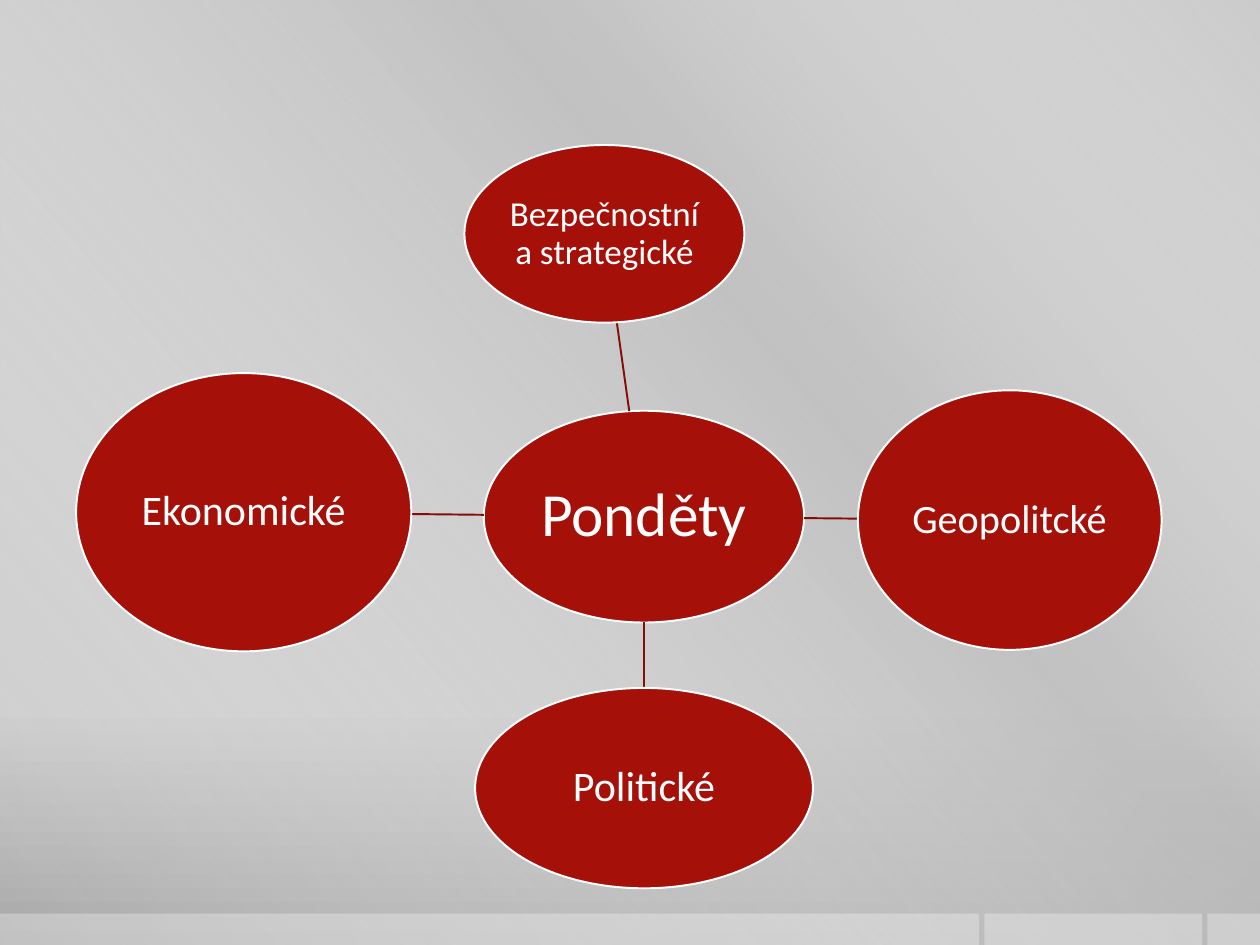
import math
from dataclasses import dataclass

import lxml.etree
import pptx
import pptx.dml.color
import pptx.enum.shapes
import pptx.enum.text
import pptx.oxml
import pptx.oxml.ns
import pptx.util

Pt = pptx.util.Pt
RGB = pptx.dml.color.RGBColor
qn = pptx.oxml.ns.qn
SHAPES = pptx.enum.shapes.MSO_SHAPE


@dataclass(frozen=True)
class Theme:
    font: str = "Calibri"
    bubble: RGB = RGB(0xA5, 0x10, 0x09)
    link: RGB = RGB(0x84, 0x0D, 0x07)
    white: RGB = RGB(0xFF, 0xFF, 0xFF)
    line_width: float = 1.1
    hub_size: int = 35
    large_size: int = 24
    medium_size: int = 23
    small_size: int = 20
    tile_opacity: int = 30


@dataclass(frozen=True)
class GradientStop:
    position: int
    color: str
    opacity: int = 100


@dataclass(frozen=True)
class Bubble:
    text: str
    cx: float
    cy: float
    width: float
    height: float
    size: int

    def edge_toward(self, other: "Bubble") -> tuple[float, float]:
        """Point where the line to the other centre leaves this ellipse."""
        dx, dy = other.cx - self.cx, other.cy - self.cy
        scale = 1 / math.hypot(dx / (self.width / 2), dy / (self.height / 2))
        return self.cx + dx * scale, self.cy + dy * scale


THEME = Theme()
SLIDE_W, SLIDE_H = 720, 540
TILE_TOP = 522
TILES = [(0, 559.5), (562.5, 124.5), (690, 30)]  # left, width

BACKDROP = [GradientStop(0, "CBCBCB"), GradientStop(76, "C8C8C8"),
            GradientStop(100, "A7A7A7")]
SHEEN = [GradientStop(0, "FFFFFF", 0), GradientStop(34, "BFBFBF", 61),
         GradientStop(38, "BFBFBF", 76), GradientStop(100, "FFFFFF", 0)]

HUB = Bubble("Ponděty", 368, 295.2, 183, 121, THEME.hub_size)
SPOKES = [
    Bubble("Bezpečnostní a strategické", 345.4, 133.6, 160, 101.5, THEME.small_size),
    Bubble("Geopolitcké", 577, 297.2, 173.5, 148.3, THEME.medium_size),
    Bubble("Politické", 368, 450.4, 193, 114.5, THEME.large_size),
    Bubble("Ekonomické", 139.3, 292.7, 191.5, 159, THEME.large_size),
]


def set_gradient(fill, stops: list[GradientStop], angle: int) -> None:
    """Apply a linear gradient with any number of stops, angle clockwise."""
    fill.gradient()
    # The public angle is counter-clockwise.
    fill.gradient_angle = 360 - angle
    stop_list = fill._fill._gradFill.find(qn("a:gsLst"))
    for old in list(stop_list):
        stop_list.remove(old)
    for stop in stops:
        gs = lxml.etree.SubElement(stop_list, qn("a:gs"), pos=str(stop.position * 1000))
        color = lxml.etree.SubElement(gs, qn("a:srgbClr"), val=stop.color)
        lxml.etree.SubElement(color, qn("a:alpha"), val=str(stop.opacity * 1000))


def add_plain_shape(s, kind, left: float, top: float, width: float, height: float):
    sp = s.shapes.add_shape(kind, Pt(left), Pt(top), Pt(width), Pt(height))
    sp.shadow.inherit = False
    sp.line.fill.background()
    return sp


def add_tile(s, left: float, width: float) -> None:
    sp = add_plain_shape(s, SHAPES.RECTANGLE, left, TILE_TOP, width, SLIDE_H - TILE_TOP)
    sp.fill.solid()
    sp.fill.fore_color.rgb = THEME.white
    color = sp._element.spPr.find(qn("a:solidFill"))[0]
    lxml.etree.SubElement(color, qn("a:alpha"), val=str(THEME.tile_opacity * 1000))


def add_bubble(s, bubble: Bubble) -> None:
    sp = add_plain_shape(s, SHAPES.OVAL, bubble.cx - bubble.width / 2,
                         bubble.cy - bubble.height / 2, bubble.width, bubble.height)
    sp.fill.solid()
    sp.fill.fore_color.rgb = THEME.bubble
    sp.line.color.rgb = THEME.white
    sp.line.width = Pt(THEME.line_width)
    tf = sp.text_frame
    tf.text = bubble.text
    tf.word_wrap = True
    tf.vertical_anchor = pptx.enum.text.MSO_ANCHOR.MIDDLE
    tf.margin_left = tf.margin_right = tf.margin_top = tf.margin_bottom = Pt(1)
    p = tf.paragraphs[0]
    p.alignment = pptx.enum.text.PP_ALIGN.CENTER
    p.line_spacing = 0.9
    r = p.runs[0]
    r.font.name = THEME.font
    r.font.size = Pt(bubble.size)
    r.font.color.rgb = THEME.white


def add_link(s, start: Bubble, end: Bubble) -> None:
    points = (*start.edge_toward(end), *end.edge_toward(start))
    cxn = s.shapes.add_connector(pptx.enum.shapes.MSO_CONNECTOR.STRAIGHT,
                                 *(Pt(v) for v in points))
    cxn.line.color.rgb = THEME.link
    cxn.line.width = Pt(THEME.line_width)
    lxml.etree.SubElement(cxn._element.spPr, qn("a:effectLst"))


def main() -> None:
    prs = pptx.Presentation()
    prs.slide_width, prs.slide_height = Pt(SLIDE_W), Pt(SLIDE_H)
    s = prs.slides.add_slide(prs.slide_layouts[6])

    set_gradient(s.background.fill, BACKDROP, 90)
    sheen = add_plain_shape(s, SHAPES.RECTANGLE, 0, 0, SLIDE_W, SLIDE_H)
    set_gradient(sheen.fill, SHEEN, 140)
    for left, width in TILES:
        add_tile(s, left, width)

    add_bubble(s, HUB)
    for spoke in SPOKES:
        add_link(s, HUB, spoke)
        add_bubble(s, spoke)
    prs.save("out.pptx")


if __name__ == "__main__":
    main()
